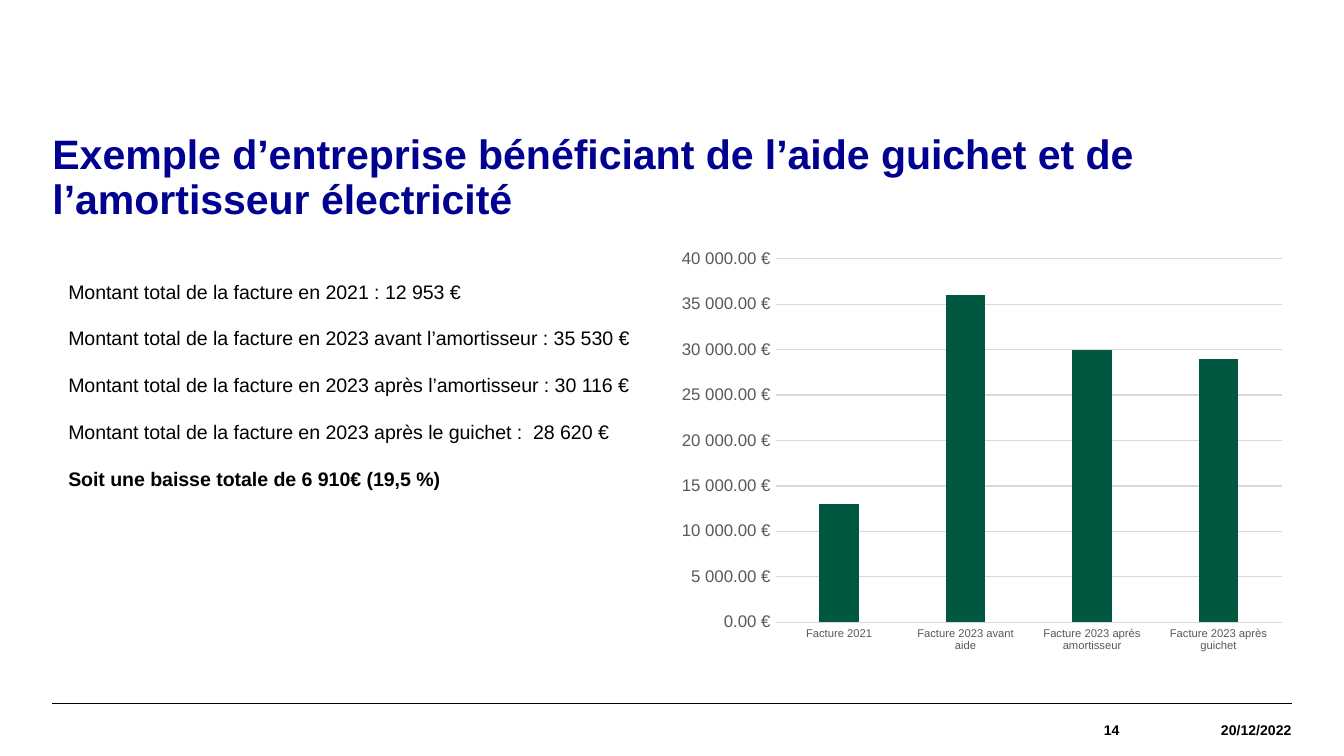
import pptx
import pptx.chart.data
import pptx.dml.color
import pptx.enum.chart
import pptx.enum.shapes
import pptx.enum.text
import pptx.util
from lxml import etree
from pptx.oxml.ns import qn

# Content
TITLE = "Exemple d’entreprise bénéficiant de l’aide guichet et de l’amortisseur électricité"
AMOUNTS = [
    "Montant total de la facture en 2021 : 12 953 €",
    "Montant total de la facture en 2023 avant l’amortisseur : 35 530 €",
    "Montant total de la facture en 2023 après l’amortisseur : 30 116 €",
    "Montant total de la facture en 2023 après le guichet :  28 620 €",
]
CONCLUSION = "Soit une baisse totale de 6 910€ (19,5 %)"
BILLS = [
    ("Facture 2021", 13000),
    ("Facture 2023 avant aide", 36000),
    ("Facture 2023 après amortisseur", 30000),
    ("Facture 2023 après guichet", 29000),
]
PAGE_NUMBER, DATE = "14", "20/12/2022"

THEME = {
    "font": "Arial",
    "title": "000091", "text": "000000", "bar": "005841",
    "axis": "595959", "grid": "D9D9D9",
    "title_size": 22, "body_size": 10.5, "footer_size": 7.5,
    "value_size": 9, "category_size": 6,
    "line_pitch": 12.6, "paragraph_gap": 12.5,
    "rule_width": 0.8, "grid_width": 0.75,
}

# Layout in inches, on a 16:9 slide
WIDTH = 10
HEIGHT = WIDTH * 9 / 16
MARGIN = 0.39
RIGHT = WIDTH - MARGIN
FOOTER_HEIGHT = 0.39
FOOTER_TOP = HEIGHT - FOOTER_HEIGHT
DATE_WIDTH, NUMBER_WIDTH = 1.28, 1.48
DATE_LEFT = RIGHT - DATE_WIDTH

Align = pptx.enum.text.PP_ALIGN
Anchor = pptx.enum.text.MSO_ANCHOR


def inches(*lengths):
    return [pptx.util.Inches(length) for length in lengths]


def color(name):
    return pptx.dml.color.RGBColor.from_string(THEME[name])


def set_font(font, size, tint="text", bold=False):
    font.name = THEME["font"]
    font.size = pptx.util.Pt(THEME[size])
    font.color.rgb = color(tint)
    font.bold = bold


def add_text(page, text, *, at, size, tint="text", bold=False, align=Align.LEFT,
             anchor=Anchor.TOP, spacing=None, inset=0):
    box = page.shapes.add_textbox(*inches(*at))
    frame = box.text_frame
    frame.word_wrap = True
    frame.vertical_anchor = anchor
    frame.margin_left = frame.margin_right = pptx.util.Inches(inset)
    frame.margin_top = frame.margin_bottom = pptx.util.Inches(inset / 2)
    frame.text = text
    for para in frame.paragraphs:
        para.alignment = align
        para.line_spacing = spacing
        for span in para.runs:
            set_font(span.font, size, tint, bold)
    return box


def add_bill_chart(page, at):
    data = pptx.chart.data.CategoryChartData()
    data.categories = [name for name, _ in BILLS]
    data.add_series("Series 1", [amount for _, amount in BILLS])
    kind = pptx.enum.chart.XL_CHART_TYPE.COLUMN_CLUSTERED
    chart = page.shapes.add_chart(kind, *inches(*at), data).chart
    chart.has_legend = chart.has_title = False
    chart.font.name = THEME["font"]

    plot = chart.plots[0]
    plot.gap_width, plot.overlap = 219, -27
    plot.vary_by_categories = False
    bars = plot.series[0].format.fill
    bars.solid()
    bars.fore_color.rgb = color("bar")

    categories, values = chart.category_axis, chart.value_axis
    for axis, size in ((categories, "category_size"), (values, "value_size")):
        axis.major_tick_mark = axis.minor_tick_mark = pptx.enum.chart.XL_TICK_MARK.NONE
        set_font(axis.tick_labels.font, size, "axis")
    values.minimum_scale, values.maximum_scale, values.major_unit = 0, 40000, 5000
    values.tick_labels.number_format = '#\\ ##0.00\\ "€"'
    values.tick_labels.number_format_is_linked = False
    values.format.line.fill.background()
    for line in (categories.format.line, values.major_gridlines.format.line):
        line.color.rgb = color("grid")
        line.width = pptx.util.Pt(THEME["grid_width"])


def main():
    deck = pptx.Presentation()
    deck.slide_width, deck.slide_height = inches(WIDTH, HEIGHT)
    page = deck.slides.add_slide(deck.slide_layouts[6])

    # Title
    add_text(page, TITLE, at=(MARGIN, 1, 9.21, 0.79), size="title_size",
             tint="title", bold=True, spacing=0.9)

    # Amounts, about one line apart, ending with the conclusion
    box = add_text(page, "\n".join([*AMOUNTS, CONCLUSION]), at=(0.41, 2.03, 4.43, 1.69),
                   size="body_size", spacing=pptx.util.Pt(THEME["line_pitch"]), inset=0.1)
    paras = box.text_frame.paragraphs
    for para in paras[1:]:
        para.space_before = pptx.util.Pt(THEME["paragraph_gap"])
    paras[-1].runs[0].font.bold = True

    # Chart
    add_bill_chart(page, at=(4.98, 1.79, 4.65, 3.13))

    # Footer
    rule = page.shapes.add_connector(pptx.enum.shapes.MSO_CONNECTOR.STRAIGHT,
                                     *inches(MARGIN, FOOTER_TOP, RIGHT, FOOTER_TOP))
    rule.line.color.rgb = color("text")
    rule.line.width = pptx.util.Pt(THEME["rule_width"])
    etree.SubElement(rule._element.spPr, qn("a:effectLst"))
    for text, left, width in ((PAGE_NUMBER, DATE_LEFT - NUMBER_WIDTH, NUMBER_WIDTH),
                              (DATE, DATE_LEFT, DATE_WIDTH)):
        add_text(page, text, at=(left, FOOTER_TOP, width, FOOTER_HEIGHT), size="footer_size",
                 bold=True, align=Align.RIGHT, anchor=Anchor.MIDDLE)

    deck.save("out.pptx")


if __name__ == "__main__":
    main()
